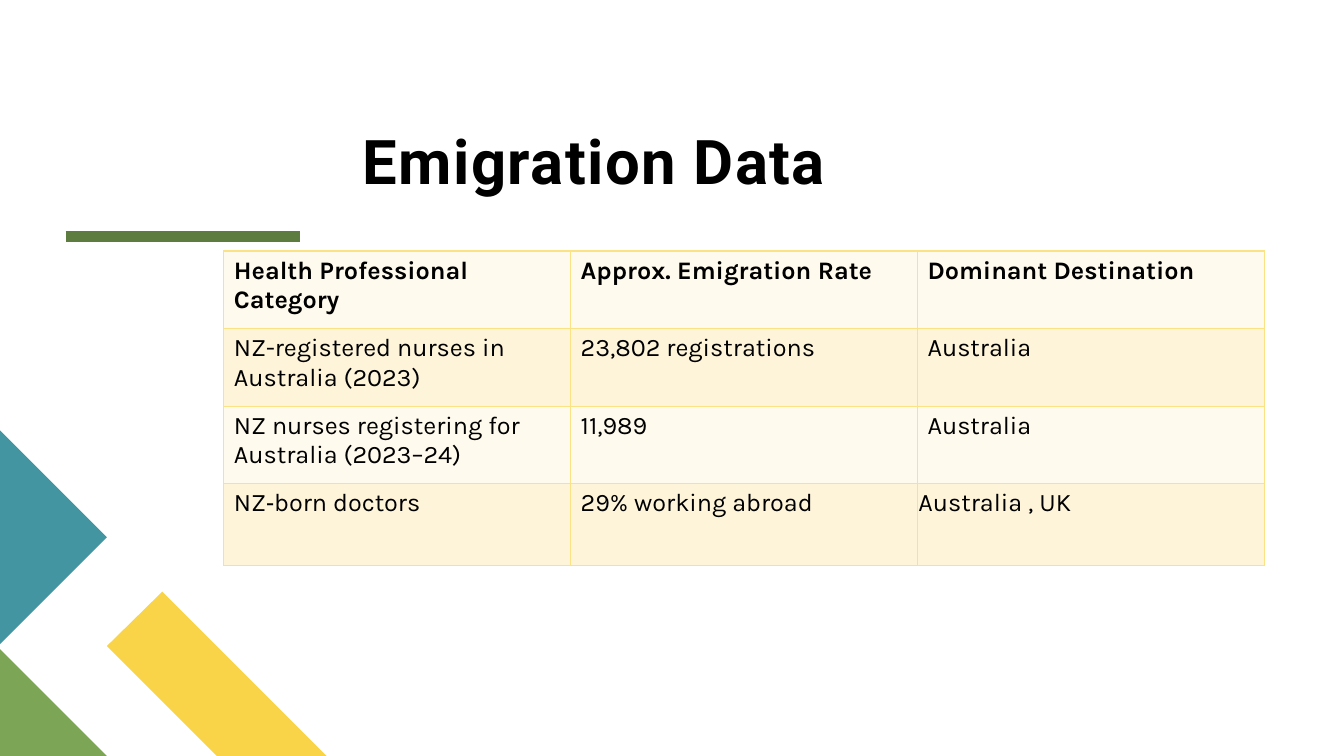
from dataclasses import dataclass

from lxml import etree
from pptx import Presentation
from pptx.dml.color import RGBColor
from pptx.enum import shapes, text
from pptx.oxml import ns
from pptx.util import Inches, Pt


@dataclass(frozen=True)
class Theme:
    ink: str = "000000"
    rule: str = "5D7D40"
    yellow: str = "F9D448"
    green: str = "7CA655"
    teal: str = "4495A2"
    border: str = "FBE284"
    bands: tuple = ("FEFAED", "FDF4D9")
    title_font: str = "Roboto"
    body_font: str = "Karla"
    title_size: int = 44
    body_size: int = 18


THEME = Theme()
ROWS = [
    ("Health Professional Category", "Approx. Emigration Rate", "Dominant Destination"),
    ("NZ-registered nurses in Australia (2023)", "23,802 registrations", "Australia"),
    ("NZ nurses registering for Australia (2023–24)", "11,989", "Australia"),
    ("NZ‑born doctors", "29% working abroad", "Australia , UK"),
]
ROW_HEIGHTS = (0.77, 0.77, 0.77, 0.81)
COLUMN_WIDTH = 3.44


def style_font(font, name, size, bold):
    font.name = name
    font.size = Pt(size)
    font.bold = bold
    font.color.rgb = RGBColor.from_string(THEME.ink)


def add_rule(page, left, right, y):
    rule = page.shapes.add_connector(
        shapes.MSO_CONNECTOR.STRAIGHT, Inches(left), Inches(y), Inches(right), Inches(y))
    rule.line.color.rgb = RGBColor.from_string(THEME.rule)
    rule.line.width = Pt(8)
    etree.SubElement(rule._element.spPr, ns.qn("a:effectLst"))


def add_polygon(page, points, color):
    start, *rest = [(Inches(x), Inches(y)) for x, y in points]
    builder = page.shapes.build_freeform(*start)
    builder.add_line_segments(rest, close=True)
    shape = builder.convert_to_shape()
    shape.shadow.inherit = False
    shape.fill.solid()
    shape.fill.fore_color.rgb = RGBColor.from_string(color)
    shape.line.fill.background()


def add_title(page, wording):
    box = page.shapes.add_textbox(Inches(0.65), Inches(0.11), Inches(11.89), Inches(1.84))
    frame = box.text_frame
    frame.word_wrap = True
    frame.vertical_anchor = text.MSO_ANCHOR.BOTTOM
    frame.margin_left = Inches(2.95)
    frame.margin_top = frame.margin_right = frame.margin_bottom = 0
    frame.text = wording
    para = frame.paragraphs[0]
    para.line_spacing = 0.8
    span = para.runs[0]
    style_font(span.font, THEME.title_font, THEME.title_size, True)
    span.font._element.set("spc", "100")


def add_borders(cell):
    properties = cell._tc.get_or_add_tcPr()
    for index, side in enumerate(("a:lnL", "a:lnR", "a:lnT", "a:lnB")):
        line = etree.Element(ns.qn(side), w=str(Pt(1)))
        fill = etree.SubElement(line, ns.qn("a:solidFill"))
        etree.SubElement(fill, ns.qn("a:srgbClr"), val=THEME.border)
        properties.insert(index, line)


def fill_cell(cell, wording, color, bold):
    cell.text = wording
    style_font(cell.text_frame.paragraphs[0].runs[0].font,
               THEME.body_font, THEME.body_size, bold)
    cell.fill.solid()
    cell.fill.fore_color.rgb = RGBColor.from_string(color)
    add_borders(cell)


def add_data_table(page, rows):
    columns = len(rows[0])
    table = page.shapes.add_table(
        len(rows), columns, Inches(2.22), Inches(2.49),
        Inches(COLUMN_WIDTH * columns), Inches(sum(ROW_HEIGHTS))).table
    for column in table.columns:
        column.width = Inches(COLUMN_WIDTH)
    for r, (height, wordings) in enumerate(zip(ROW_HEIGHTS, rows)):
        table.rows[r].height = Inches(height)
        for c, wording in enumerate(wordings):
            fill_cell(table.cell(r, c), wording, THEME.bands[r % 2], r == 0)
    table.cell(len(rows) - 1, columns - 1).margin_left = Inches(0.01)


def main():
    deck = Presentation()
    deck.slide_width = Inches(13.33)
    deck.slide_height = Inches(7.5)
    page = deck.slides.add_slide(deck.slide_layouts[6])
    add_rule(page, 0.65, 2.98, 2.35)
    add_polygon(page, [(3.24, 7.5), (2.15, 7.5), (1.06, 6.41), (1.61, 5.87)], THEME.yellow)
    add_polygon(page, [(1.06, 7.5), (0, 7.5), (0, 6.44)], THEME.green)
    add_polygon(page, [(0, 4.27), (1.06, 5.33), (0, 6.39)], THEME.teal)
    add_title(page, "Emigration Data")
    add_data_table(page, ROWS)
    deck.save("out.pptx")


if __name__ == "__main__":
    main()
